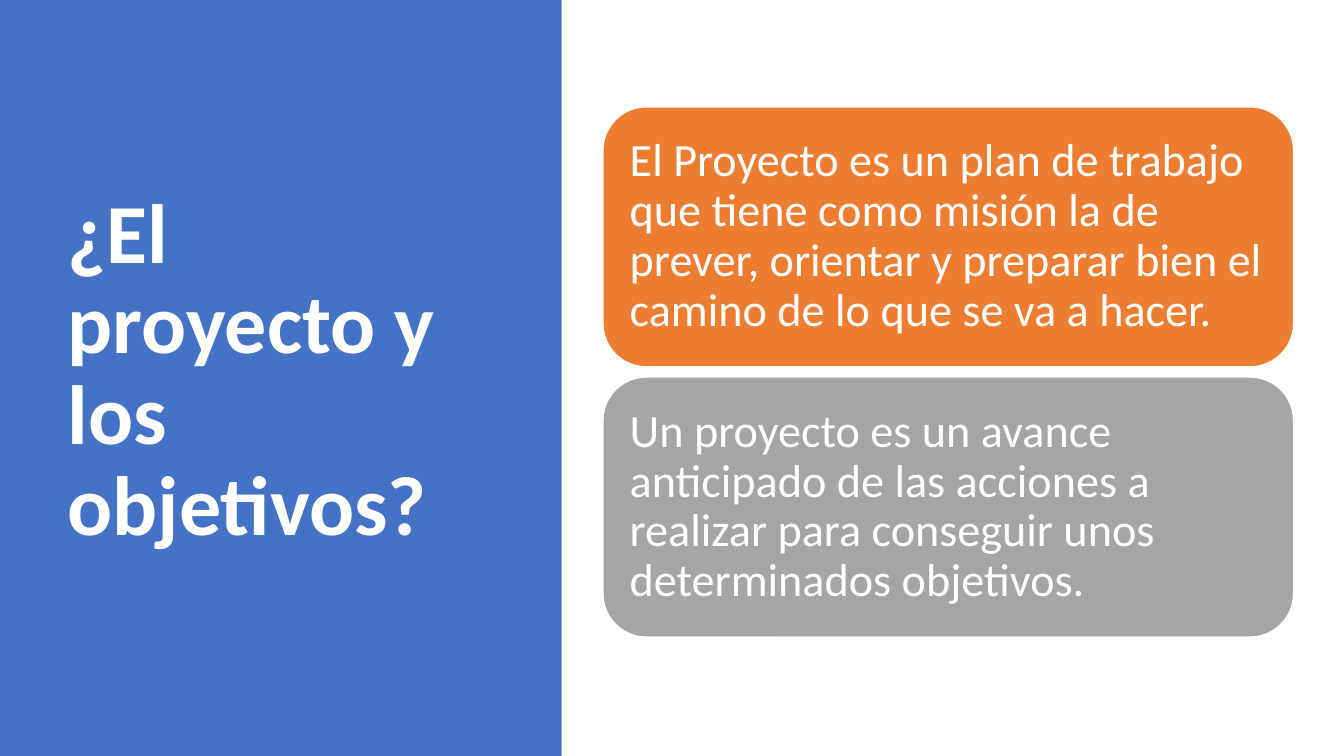
"""Build a slide with a title panel and two stacked statement cards."""
import pptx
import pptx.dml.color
import pptx.enum.shapes
import pptx.enum.text
import pptx.util

Inches = pptx.util.Inches
Pt = pptx.util.Pt
RGBColor = pptx.dml.color.RGBColor
Shapes = pptx.enum.shapes.MSO_SHAPE
WHITE = RGBColor(0xFF, 0xFF, 0xFF)
BLUE = RGBColor(0x44, 0x72, 0xC4)
ORANGE = RGBColor(0xED, 0x7D, 0x31)
GRAY = RGBColor(0xA5, 0xA5, 0xA5)

TITLE = "¿El proyecto y los objetivos?"
CARDS = [
    ("El Proyecto es un plan de trabajo que tiene como misión la de prever, "
     "orientar y preparar bien el camino de lo que se va a hacer.", ORANGE),
    ("Un proyecto es un avance anticipado de las acciones a realizar para "
     "conseguir unos determinados objetivos.", GRAY),
]

SLIDE_WIDTH, SLIDE_HEIGHT = 13.33, 7.5
PANEL_WIDTH = 5.57
TITLE_BOX = (0.57, 0.68, 4.16, 6.02)
CARD_LEFT, CARD_TOP, CARD_WIDTH, CARD_HEIGHT = 5.98, 1.06, 6.85, 2.58
CARD_GAP = 0.1
CARD_MARGIN = 0.14


def add_block(slide, kind, box, color):
    """Add a filled shape without shadow or outline."""
    shape = slide.shapes.add_shape(kind, *map(Inches, box))
    shape.shadow.inherit = False
    shape.fill.solid()
    shape.fill.fore_color.rgb = color
    shape.line.fill.background()
    return shape


def write(shape, text, size, bold=False):
    """Set white, left-aligned, vertically centred text."""
    frame = shape.text_frame
    frame.text = text
    frame.word_wrap = True
    frame.auto_size = pptx.enum.text.MSO_AUTO_SIZE.NONE
    frame.vertical_anchor = pptx.enum.text.MSO_ANCHOR.MIDDLE
    paragraph = frame.paragraphs[0]
    paragraph.alignment = pptx.enum.text.PP_ALIGN.LEFT
    paragraph.line_spacing = 0.9
    paragraph.space_before = Pt(0)
    paragraph.font.name = "Calibri"
    paragraph.font.size = Pt(size)
    paragraph.font.bold = bold
    paragraph.font.color.rgb = WHITE
    return frame


def main():
    """Lay out the slide and save it."""
    presentation = pptx.Presentation()
    presentation.slide_width = Inches(SLIDE_WIDTH)
    presentation.slide_height = Inches(SLIDE_HEIGHT)
    slide = presentation.slides.add_slide(presentation.slide_layouts[5])

    panel = add_block(slide, Shapes.RECTANGLE, (0, 0, PANEL_WIDTH, SLIDE_HEIGHT), BLUE)
    title = slide.shapes.title
    title.left, title.top, title.width, title.height = map(Inches, TITLE_BOX)
    write(title, TITLE, 60, bold=True)
    panel.element.addnext(title.element)

    for row, (text, color) in enumerate(CARDS):
        top = CARD_TOP + row * (CARD_HEIGHT + CARD_GAP)
        box = (CARD_LEFT, top, CARD_WIDTH, CARD_HEIGHT)
        card = add_block(slide, Shapes.ROUNDED_RECTANGLE, box, color)
        card.line.color.rgb = WHITE
        card.line.width = Pt(1)
        frame = write(card, text, 33)
        frame.margin_left = frame.margin_right = Inches(CARD_MARGIN)
        frame.margin_top = frame.margin_bottom = Inches(CARD_MARGIN)

    presentation.save("out.pptx")


if __name__ == "__main__":
    main()
